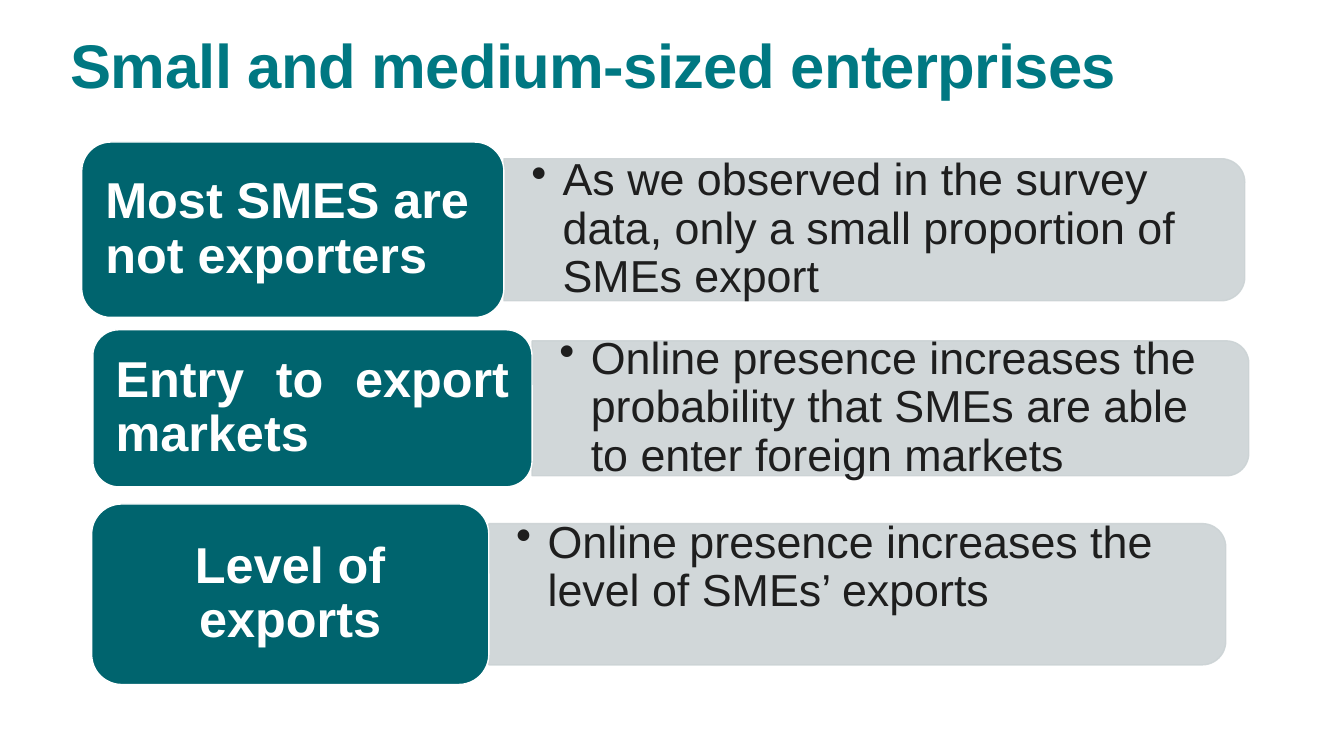
from lxml.etree import SubElement
from pptx import Presentation
from pptx.dml.color import RGBColor
from pptx.enum.shapes import MSO_SHAPE as SHAPE
from pptx.enum.text import MSO_ANCHOR as ANCHOR, PP_ALIGN as ALIGN
from pptx.oxml.ns import qn
from pptx.util import Cm, Pt

TEAL = RGBColor(0x00, 0x64, 0x6E)
TITLE_TEAL = RGBColor(0x00, 0x78, 0x82)
GREY = RGBColor(0xCC, 0xD3, 0xD5)
INK = RGBColor(0x1E, 0x1E, 0x1E)
WHITE = RGBColor(0xFF, 0xFF, 0xFF)


def write(sp, text, size, color, bold=False, align=ALIGN.LEFT, anchor=ANCHOR.MIDDLE,
          insets=(0, 0, 0, 0), bullet=False, spacing=None):
    """Fill a shape with one formatted paragraph."""
    tf = sp.text_frame
    tf.word_wrap = True
    tf.vertical_anchor = anchor
    tf.margin_left, tf.margin_top, tf.margin_right, tf.margin_bottom = map(Cm, insets)
    p = tf.paragraphs[0]
    p.alignment = align
    p.line_spacing = 0.9
    if bullet:
        pPr = p._p.get_or_add_pPr()
        pPr.set("marL", str(Cm(0.79)))
        pPr.set("indent", str(Cm(-0.79)))
        SubElement(pPr, qn("a:buChar"), char="•")
    r = p.add_run()
    r.text = text
    r.font.name = "Arial"
    r.font.size = Pt(size)
    r.font.bold = bold
    r.font.color.rgb = color
    if spacing is not None:
        r._r.get_or_add_rPr().set("spc", str(spacing))


class Deck:
    """Hold the slide and draw its title, labels and panels."""

    def __init__(self):
        self.prs = Presentation()
        self.prs.slide_width, self.prs.slide_height = Cm(33.87), Cm(19.05)
        self.s = self.prs.slides.add_slide(self.prs.slide_layouts[6])

    def shape(self, kind, box, fill, line, alpha=None):
        """Add a filled and outlined preset shape."""
        sp = self.s.shapes.add_shape(kind, *map(Cm, box))
        sp.shadow.inherit = False
        sp.fill.solid()
        sp.fill.fore_color.rgb = fill
        sp.line.color.rgb = line
        sp.line.width = Pt(1)
        if alpha:
            for clr in sp._element.spPr.iter(qn("a:srgbClr")):
                SubElement(clr, qn("a:alpha"), val=str(alpha * 1000))
        return sp

    def text(self, text, box, **fmt):
        """Add a text box."""
        write(self.s.shapes.add_textbox(*map(Cm, box)), text, **fmt)

    def panel(self, text, x, mid, w, h, top_aligned=False):
        """Add a grey panel rounded on the right, with a bullet on it."""
        sp = self.shape(SHAPE.ROUND_2_SAME_RECTANGLE,
                        (x + (w - h) / 2, mid - w / 2, h, w), GREY, GREY, alpha=90)
        sp.rotation = 90
        text_h = h - 0.35
        y = mid - text_h / 2
        fmt = dict(insets=(0.69, 0.36, 0.69, 0.36))
        if top_aligned:
            y -= 0.28
            fmt = dict(insets=(0.69, 0, 0.69, 0), anchor=ANCHOR.TOP)
        self.text(text, (x, y, w - 0.18, text_h), size=32, color=INK, bullet=True, **fmt)

    def label(self, text, box, align):
        """Add a teal label."""
        sp = self.shape(SHAPE.ROUNDED_RECTANGLE, box, TEAL, WHITE)
        write(sp, text, 36, WHITE, bold=True, align=align, insets=(0.38, 0.18, 0.38, 0.18))


ROWS = [
    ("Most SMES are not exporters", ALIGN.LEFT, (2.06, 3.58, 10.64, 4.42),
     "As we observed in the survey data, only a small proportion of SMEs export",
     (18.67, 3.58), False),
    ("Entry to export markets", ALIGN.JUSTIFY, (2.34, 8.31, 11.07, 3.96),
     "Online presence increases the probability that SMEs are able to enter foreign markets",
     (18.06, 3.4), False),
    ("Level of exports", ALIGN.CENTER, (2.31, 12.7, 10.01, 4.55),
     "Online presence increases the level of SMEs’ exports",
     (18.57, 3.56), True),
]


def main():
    """Build and save the slide."""
    deck = Deck()
    for name, align, box, detail, size, top_aligned in ROWS:
        x, y, w, h = box
        deck.panel(detail, x + w, y + h / 2, *size, top_aligned=top_aligned)
        deck.label(name, box, align)
    deck.text("Small and medium-sized enterprises", (1.78, 0.76, 30.35, 2.74), size=44,
              color=TITLE_TEAL, bold=True, anchor=ANCHOR.TOP,
              insets=(0, 0.13, 0.25, 0.13), spacing=-50)
    deck.prs.save("out.pptx")


if __name__ == "__main__":
    main()
